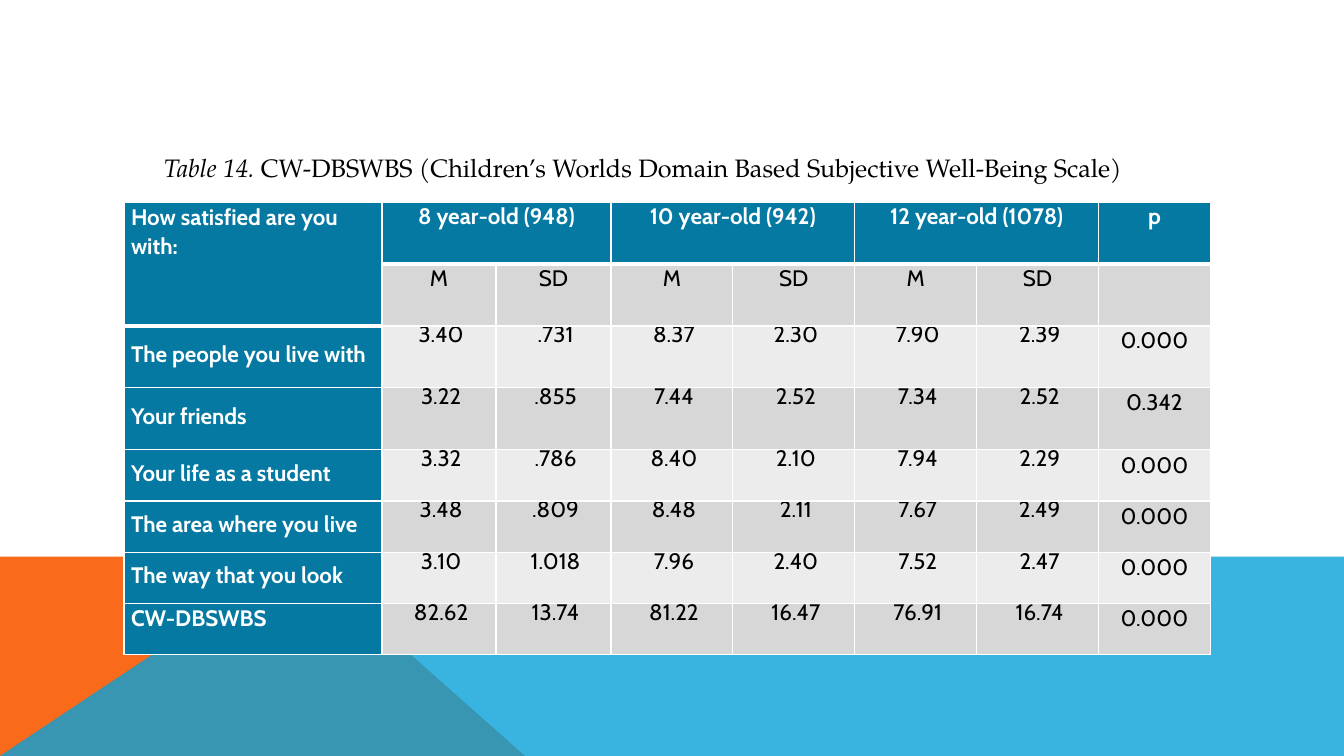
"""Build a slide with a table of well-being scores by age group."""
from dataclasses import dataclass

from lxml import etree
from pptx import Presentation
from pptx.dml.color import RGBColor
from pptx.enum.text import MSO_ANCHOR, MSO_AUTO_SIZE, PP_ALIGN
from pptx.oxml.ns import qn
from pptx.util import Pt

TOP, MIDDLE = MSO_ANCHOR.TOP, MSO_ANCHOR.MIDDLE
LEFT, CENTER = PP_ALIGN.LEFT, PP_ALIGN.CENTER
NO_FIT = MSO_AUTO_SIZE.NONE

HUES = {
    "orange": "F96A1B", "sky": "08A1D9", "head": "0679A3",
    "dark": "D7D7D8", "light": "ECECEC", "white": "FFFFFF", "black": "000000",
}
WIDE, HIGH, EDGE = 960, 540, 397.6
WIDTHS = (184.3, 81.4, 82.1, 87.1, 87.1, 87.1, 87.1, 79.9)
HEIGHTS = (44.25,) * 4 + (36.6,) * 4
MARGINS = {"margin_left": Pt(5), "margin_right": Pt(5),
           "margin_top": 0, "margin_bottom": 0}
BOX = {"left": Pt(79.2), "top": Pt(94.3), "width": Pt(764.6), "height": Pt(36.7)}
FRAME = {"margin_left": Pt(7.2), "margin_right": Pt(7.2),
         "margin_top": Pt(3.6), "margin_bottom": Pt(3.6),
         "word_wrap": True, "auto_size": NO_FIT, "vertical_anchor": TOP}


@dataclass
class Patch:
    """A flat area of colour at the foot of the slide."""
    points: tuple
    hue: str
    alpha: int = 100


@dataclass
class Entry:
    """A table row of one label, six scores and a p value."""
    label: str
    scores: str
    p: str
    gap: object = 1.07
    label_gap: object = Pt(16)
    anchor: object = MIDDLE


@dataclass
class Look:
    """The text format of a table cell."""
    hue: str = "black"
    bold: bool = False
    align: object = CENTER
    gap: object = Pt(20)
    indent: int = 0
    anchor: object = TOP


PATCHES = (
    Patch(((0, HIGH), (0, EDGE), (214.5, EDGE), (375, HIGH)), "orange"),
    Patch(((0, HIGH), (214, EDGE), (WIDE, EDGE), (WIDE, HIGH)), "sky", 80),
)
GROUPS = ("8 year-old (948)", "10 year-old (942)", "12 year-old (1078)")
ENTRIES = (
    Entry("The people you live with", "3.40 .731 8.37 2.30 7.90 2.39", "0.000", Pt(20)),
    Entry("Your friends", "3.22 .855 7.44 2.52 7.34 2.52", "0.342", Pt(20)),
    Entry("Your life as a student", "3.32 .786 8.40 2.10 7.94 2.29", "0.000"),
    Entry("The area where you live", "3.48 .809 8.48 2.11 7.67 2.49", "0.000"),
    Entry("The way that you look", "3.10 1.018 7.96 2.40 7.52 2.47", "0.000"),
    Entry("CW-DBSWBS", "82.62 13.74 81.22 16.47 76.91 16.74", "0.000",
          label_gap=1.07, anchor=TOP),
)
HEAD = Look("white", True)
PLAIN = Look()
SCORE = Look(gap=Pt(16), indent=3)


def apply(target: object, values: dict) -> None:
    """Set each named value on the target."""
    for name, value in values.items():
        setattr(target, name, value)


def paint(fill: object, hue: str) -> None:
    """Give a fill one solid colour."""
    fill.solid()
    fill.fore_color.rgb = RGBColor.from_string(HUES[hue])


def write(par: object, text: str, hue: str, **font: object) -> None:
    """Add a run of text with its font values."""
    run = par.add_run()
    run.text = text
    apply(run.font, font)
    run.font.color.rgb = RGBColor.from_string(HUES[hue])


def draw_patch(shapes: object, patch: Patch) -> None:
    """Draw a patch as a closed outline."""
    first, *rest = [(Pt(x), Pt(y)) for x, y in patch.points]
    pen = shapes.build_freeform(*first)
    pen.add_line_segments(rest, close=True)
    shape = pen.convert_to_shape()
    shape.shadow.inherit = False
    shape.line.fill.background()
    paint(shape.fill, patch.hue)
    if patch.alpha < 100:
        color = shape.fill._xPr.find(".//" + qn("a:srgbClr"))
        etree.SubElement(color, qn("a:alpha"), val=str(patch.alpha * 1000))


def draw_title(title: object) -> None:
    """Place the title and write its two runs."""
    apply(title, BOX)
    apply(title.text_frame, FRAME)
    par = title.text_frame.paragraphs[0]
    apply(par, {"alignment": CENTER, "line_spacing": 1.5})
    font = {"name": "TeX Gyre Pagella", "size": Pt(18), "bold": False}
    write(par, "Table 14. ", "black", italic=True, **font)
    write(par, "CW-DBSWBS (Children’s Worlds Domain Based Subjective "
               "Well-Being Scale) ", "black", italic=False, **font)


def rule(cell: object, side: str, width: int) -> None:
    """Add a white border to one side of a cell."""
    props = cell._tc.get_or_add_tcPr()
    line = etree.SubElement(props, qn("a:ln" + side), w=str(Pt(width)))
    fill = etree.SubElement(line, qn("a:solidFill"))
    etree.SubElement(fill, qn("a:srgbClr"), val=HUES["white"])


def dress(cell: object, row: int, col: int) -> None:
    """Set the borders, fill and margins of a cell."""
    last = 1 if col == 0 else 0
    widths = {"L": 1, "R": 1, "T": 3 if row == last + 1 else 1,
              "B": 3 if row == last else 1}
    for side, width in widths.items():
        rule(cell, side, width)
    band = "light" if row % 2 == 0 else "dark"
    paint(cell.fill, "head" if row == 0 or col == 0 else band)
    apply(cell, MARGINS)


def fill_cell(cell: object, text: str, look: Look) -> None:
    """Write text in a cell with the given look."""
    cell.vertical_anchor = look.anchor
    par = cell.text_frame.paragraphs[0]
    apply(par, {"alignment": look.align, "line_spacing": look.gap})
    if look.indent:
        props = par._p.get_or_add_pPr()
        apply_marks = {"marL": str(Pt(look.indent)), "indent": "0"}
        props.attrib.update(apply_marks)
    write(par, text, look.hue, name="Cabin", size=Pt(16), bold=look.bold)


def draw_table(shapes: object) -> None:
    """Draw the table with its heads and rows."""
    table = shapes.add_table(len(HEIGHTS), len(WIDTHS), Pt(88.6), Pt(144.3),
                             Pt(sum(WIDTHS)), Pt(sum(HEIGHTS))).table
    for part, width in zip(table.columns, WIDTHS):
        part.width = Pt(width)
    for part, height in zip(table.rows, HEIGHTS):
        part.height = Pt(height)
    for row in range(len(HEIGHTS)):
        for col in range(len(WIDTHS)):
            dress(table.cell(row, col), row, col)

    table.cell(0, 0).merge(table.cell(1, 0))
    fill_cell(table.cell(0, 0), "How satisfied are you with:",
              Look("white", True, LEFT, 1.07))
    for col, group in zip(range(1, 7, 2), GROUPS):
        table.cell(0, col).merge(table.cell(0, col + 1))
        fill_cell(table.cell(0, col), group, HEAD)
        fill_cell(table.cell(1, col), "M", PLAIN)
        fill_cell(table.cell(1, col + 1), "SD", PLAIN)
    fill_cell(table.cell(0, 7), "p", HEAD)

    for row, entry in enumerate(ENTRIES, 2):
        fill_cell(table.cell(row, 0), entry.label,
                  Look("white", True, LEFT, entry.label_gap, anchor=entry.anchor))
        for col, score in enumerate(entry.scores.split(), 1):
            fill_cell(table.cell(row, col), score, SCORE)
        fill_cell(table.cell(row, 7), entry.p, Look(gap=entry.gap))


def main() -> None:
    """Build and save the slide."""
    deck = Presentation()
    apply(deck, {"slide_width": Pt(WIDE), "slide_height": Pt(HIGH)})
    slide = deck.slides.add_slide(deck.slide_layouts[5])
    paint(slide.background.fill, "white")
    for patch in PATCHES:
        draw_patch(slide.shapes, patch)
    draw_title(slide.shapes.title)
    draw_table(slide.shapes)
    deck.save("out.pptx")


if __name__ == "__main__":
    main()
